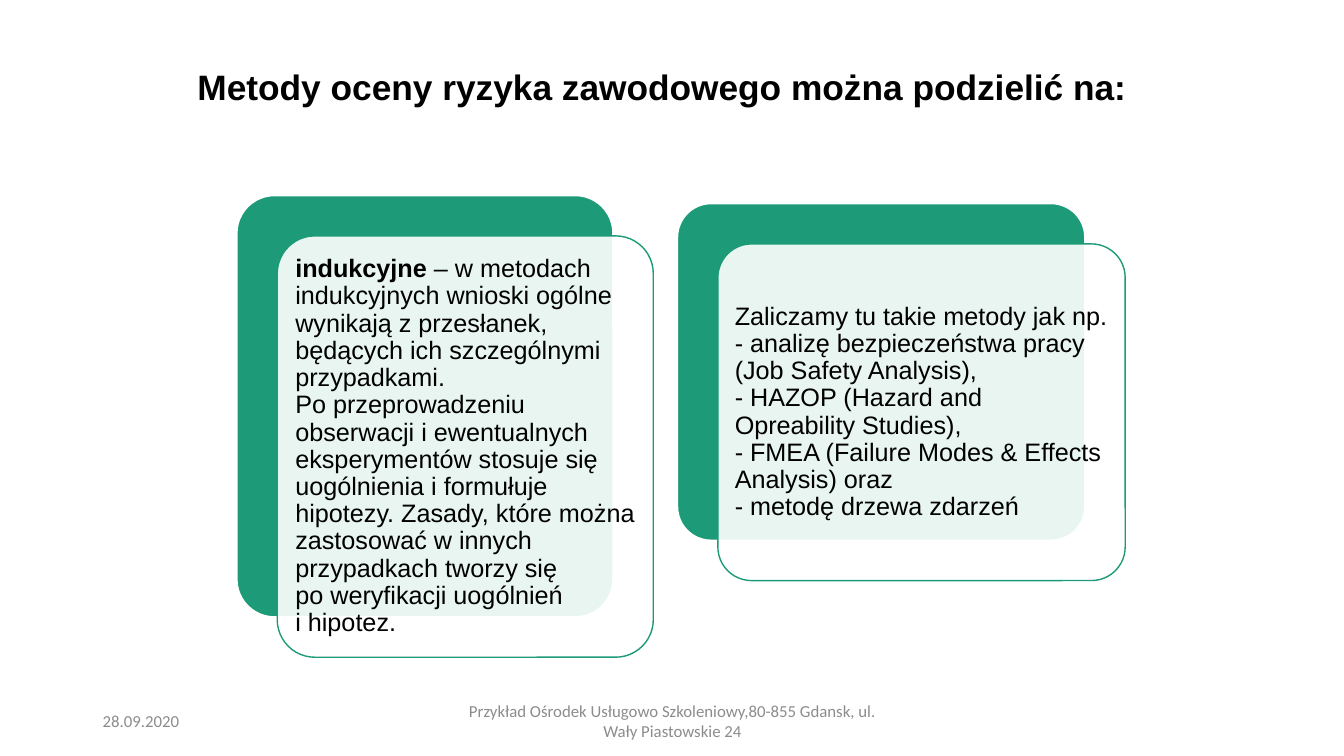
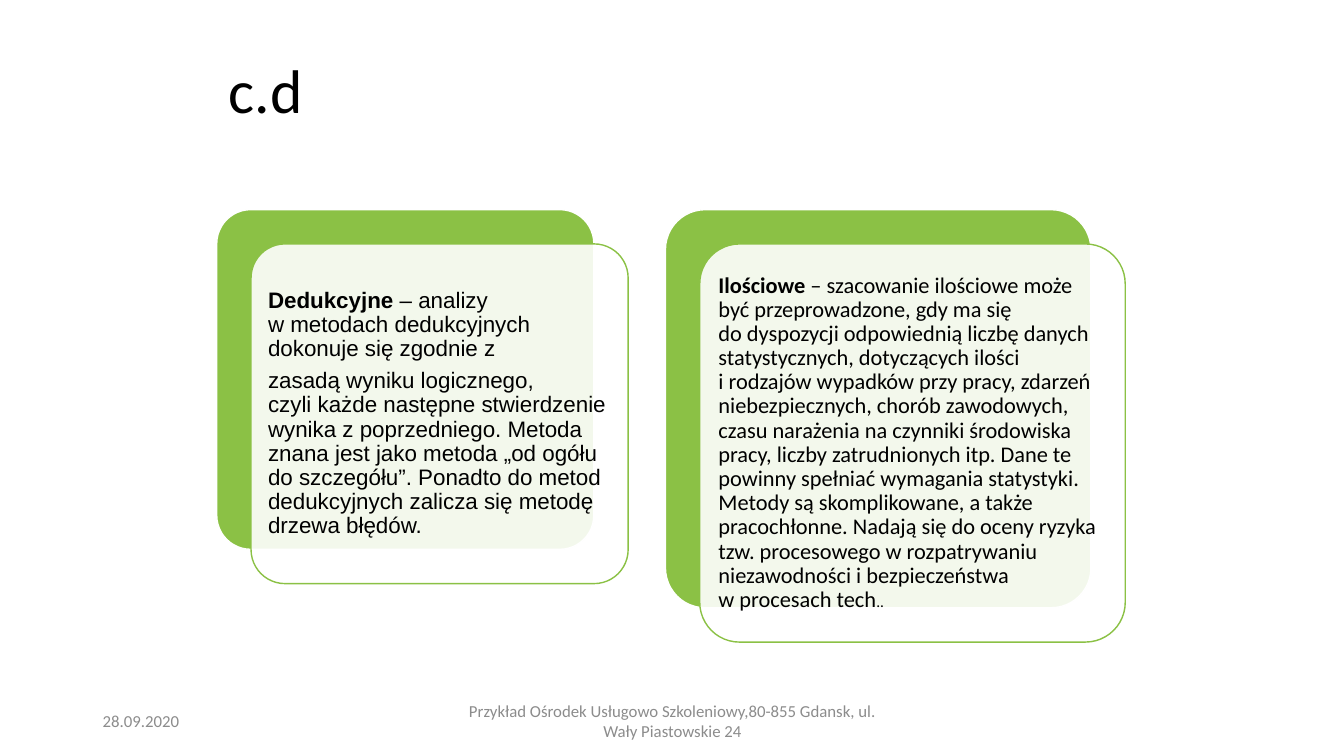
from lxml import etree
from pptx import Presentation
from pptx.dml.color import RGBColor
from pptx.enum.shapes import MSO_SHAPE
from pptx.enum.text import MSO_ANCHOR, PP_ALIGN
from pptx.oxml.ns import qn
from pptx.util import Pt

ROUND = MSO_SHAPE.ROUNDED_RECTANGLE
MIDDLE = MSO_ANCHOR.MIDDLE
LEFT, CENTER = PP_ALIGN.LEFT, PP_ALIGN.CENTER

PX = 9144  # 100 px to the inch
PAD = 7
SANS, BODY = "Arial", "Calibri"
HEX = {
    "ink": "000000",
    "paper": "FFFFFF",
    "muted": "8C8C8C",
    "teal": "1D9A78",
    "lime": "8BC145",
}
TIE = "~"  # stands for a no-break space in the texts below

DATE = "28.09.2020"
OWNER = ("Przykład Ośrodek Usługowo Szkoleniowy,80-855 Gdansk, "
         "ul. Wały Piastowskie 24")

INDUCT = [[
    "indukcyjne ",
    "– w~metodach indukcyjnych wnioski ogólne wynikają z~przesłanek, "
    "będących ich szczególnymi przypadkami. Po~przeprowadzeniu obserwacji "
    "i~ewentualnych eksperymentów stosuje się uogólnienia i~formułuje "
    "hipotezy. Zasady, które można zastosować w~innych przypadkach tworzy "
    "się po~weryfikacji uogólnień i~hipotez.",
]]
METHODS = [
    ["Zaliczamy tu takie metody jak np."],
    ["- analizę bezpieczeństwa pracy (Job Safety Analysis),"],
    ["- HAZOP (Hazard and Opreability Studies),"],
    ["- FMEA (Failure Modes & Effects Analysis) oraz"],
    ["- metodę drzewa zdarzeń"],
]
DEDUCT = [
    ["Dedukcyjne ",
     "– analizy w~metodach dedukcyjnych dokonuje się zgodnie z"],
    ["zasadą wyniku logicznego, czyli~każde następne stwierdzenie wynika "
     "z~poprzedniego. Metoda znana jest jako metoda „od ogółu "
     "do~szczegółu”. Ponadto do~metod dedukcyjnych zalicza się metodę "
     "drzewa błędów."],
]
AMOUNT = [[
    "Ilościowe ",
    "– szacowanie ilościowe może być przeprowadzone, gdy ma się "
    "do~dyspozycji odpowiednią liczbę danych statystycznych, dotyczących "
    "ilości i~rodzajów wypadków przy~pracy, zdarzeń niebezpiecznych, chorób "
    "zawodowych, czasu narażenia na~czynniki środowiska pracy, liczby "
    "zatrudnionych itp. Dane te powinny spełniać wymagania statystyki. "
    "Metody są skomplikowane, a~także pracochłonne. Nadają się do~oceny "
    "ryzyka tzw. procesowego w~rozpatrywaniu niezawodności "
    "i~bezpieczeństwa w~procesach tech",
    "..",
]]


def rgb(name):
    return RGBColor.from_string(HEX[name])


def scale(box):
    return [n * PX for n in box]


def write(frame, paras, font, size, ink="ink", align=LEFT, lines=0.9, gap=0):
    """Fill a frame; each paragraph is a list of run texts."""
    frame.word_wrap = True
    frame.vertical_anchor = MIDDLE
    for i, parts in enumerate(paras):
        para = frame.add_paragraph() if i else frame.paragraphs[0]
        para.alignment = align
        para.line_spacing = lines
        para.space_after = Pt(gap)
        for part in parts:
            run = para.add_run()
            run.text = part.replace(TIE, chr(160))
            run.font.name = font
            run.font.size = Pt(size)
            run.font.color.rgb = rgb(ink)


def label(slide, box, text, font, size, **style):
    frame = slide.shapes.add_textbox(*scale(box)).text_frame
    write(frame, [[text]], font, size, **style)
    return frame.paragraphs[0].runs[0]


def plate(slide, box, fill, line):
    shape = slide.shapes.add_shape(ROUND, *scale(box))
    shape.adjustments[0] = 0.1
    shape.shadow.inherit = False
    shape.fill.solid()
    shape.fill.fore_color.rgb = rgb(fill)
    shape.line.color.rgb = rgb(line)
    shape.line.width = Pt(1)
    return shape


def card(slide, box, step, hue, paras, font, size, gap=0):
    """Coloured plate with a translucent text plate shifted by step."""
    x, y, w, h = box
    plate(slide, box, hue, "paper")
    front = plate(slide, (x + step, y + step, w, h), "paper", hue)
    tint = front.fill._xPr.find(qn("a:solidFill"))[0]
    etree.SubElement(tint, qn("a:alpha"), val="90000")
    frame = front.text_frame
    frame.margin_left = frame.margin_right = PAD * PX
    frame.margin_top = frame.margin_bottom = PAD * PX
    write(frame, paras, font, size, gap=gap)
    return frame.paragraphs[0].runs


def page(deck):
    """Blank slide with the shared footer."""
    slide = deck.slides.add_slide(deck.slide_layouts[6])
    for box, text, align in (((92, 695, 300, 40), DATE, LEFT),
                             ((442, 695, 450, 40), OWNER, CENTER)):
        label(slide, box, text, BODY, 12, ink="muted", align=align, lines=1)
    return slide


def split(deck):
    slide = page(deck)
    title = label(slide, (186, 26, 961, 125),
                  "Metody oceny ryzyka zawodowego można podzielić na:",
                  SANS, 25.2)
    title.font.bold = True
    runs = card(slide, (235, 194, 373, 418), 40, "teal", INDUCT, SANS, 18)
    runs[0].font.bold = True
    card(slide, (672, 202, 404, 334), 40, "teal", METHODS, SANS, 18)


def more(deck):
    slide = page(deck)
    label(slide, (217, 30, 900, 125), "c.d", BODY, 44)
    runs = card(slide, (215, 208, 374, 337), 34, "lime", DEDUCT, SANS, 16,
                gap=5.6)
    runs[0].font.bold = True
    runs = card(slide, (660, 208, 422, 395), 34, "lime", AMOUNT, BODY, 16)
    runs[0].font.bold = True
    runs[-1].font.size = Pt(11)


def main():
    deck = Presentation()
    deck.slide_width, deck.slide_height = scale((1333, 750))
    split(deck)
    more(deck)
    deck.save("out.pptx")


if __name__ == "__main__":
    main()
